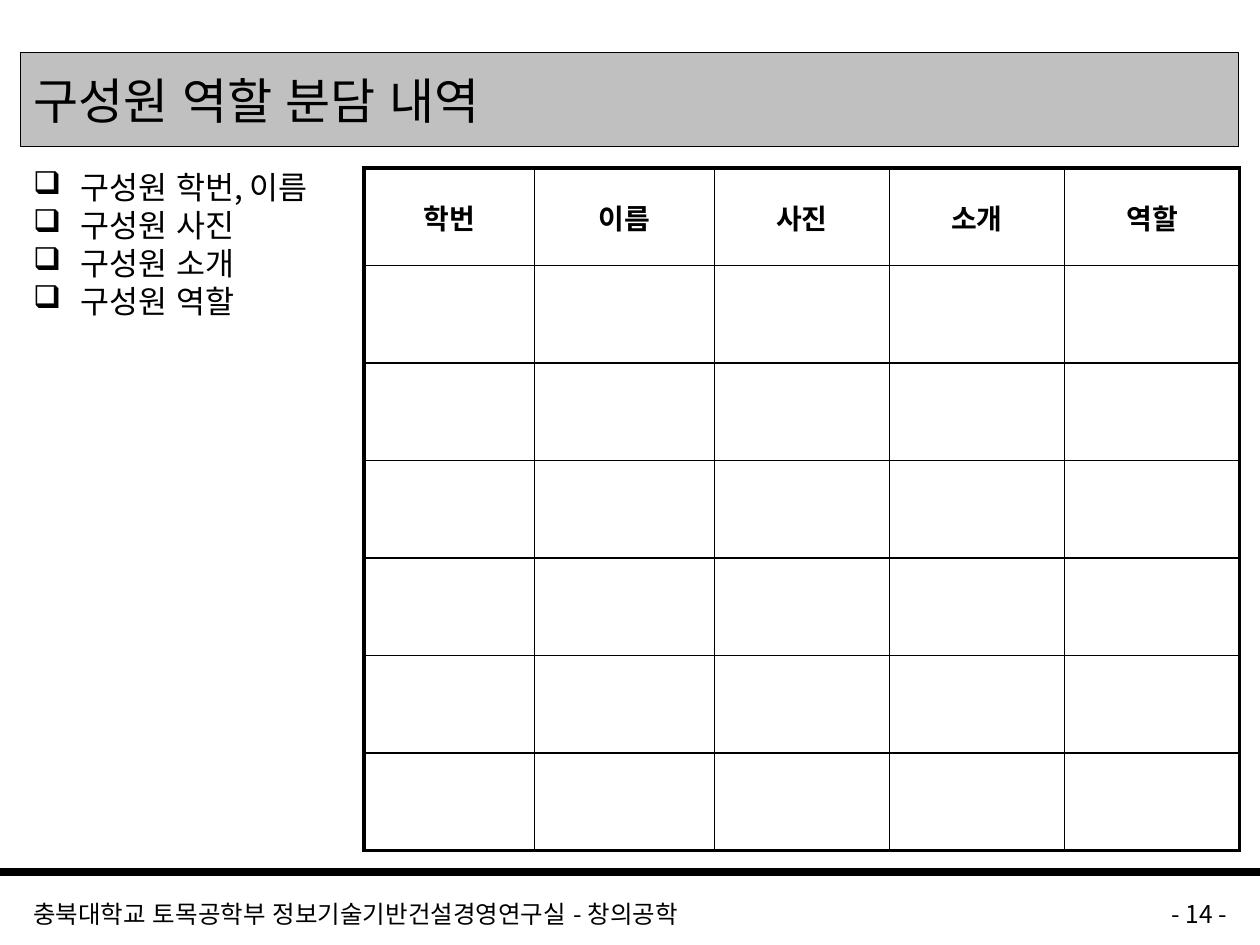
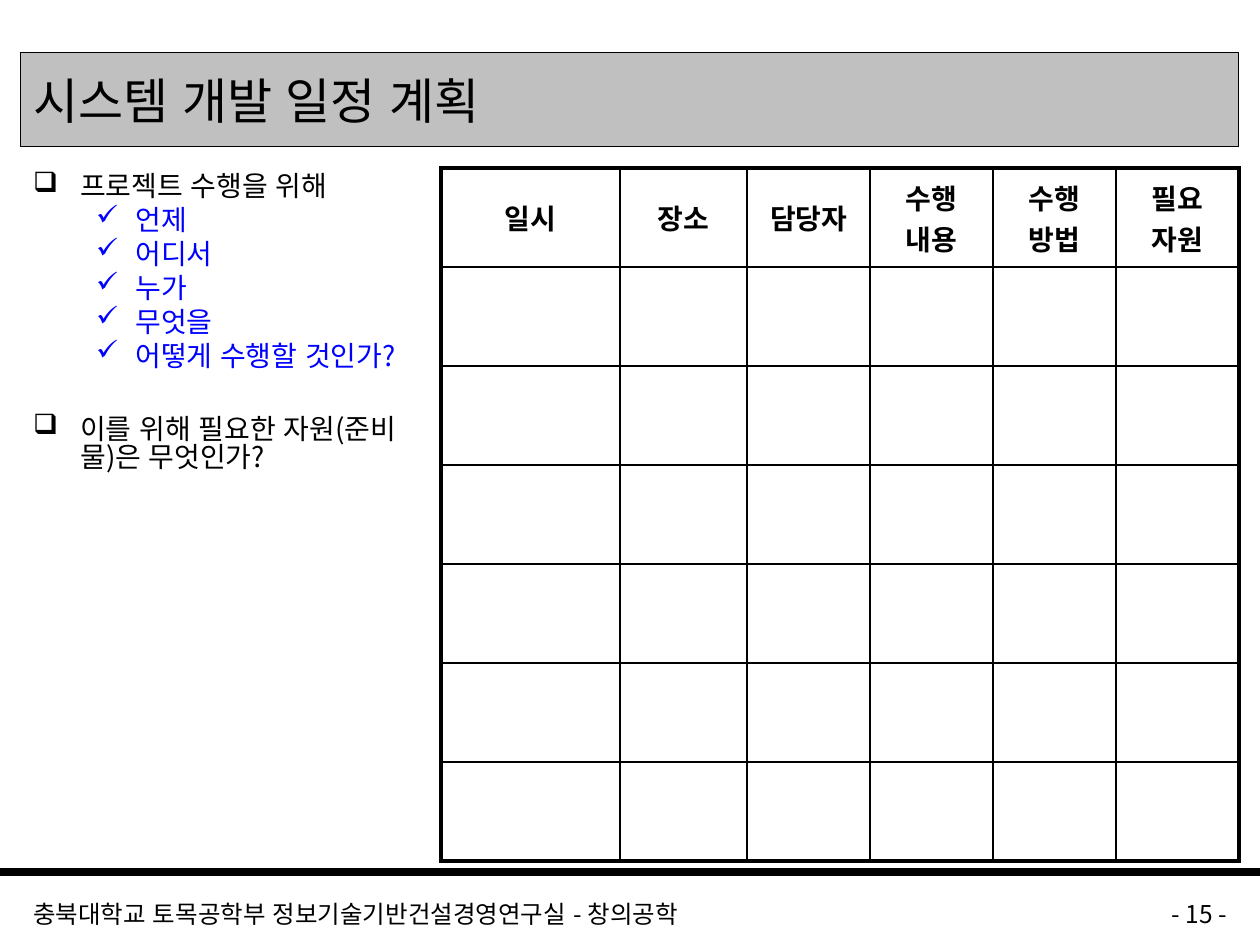
from dataclasses import dataclass

from lxml import etree
from pptx import Presentation
from pptx.dml.color import RGBColor
from pptx.enum import lang, shapes, text
from pptx.oxml import ns
from pptx.util import Cm, Pt

FONT = "Noto Sans CJK KR"
COLORS = {"ink": "000000", "band": "C0C0C0", "detail": "0000FF", "paper": "FFFFFF"}
SLIDE_W, SLIDE_H = Cm(25.4), Cm(19.05)
MARGIN, CONTENT_TOP = Cm(0.42), Cm(3.39)
BODY_H = Cm(13.76)
FOOTER = "충북대학교 토목공학부 정보기술기반건설경영연구실 - 창의공학"
TABLE_ROWS = 7
THIN, THICK = 1, 2.25


@dataclass(frozen=True)
class Level:
    bullet: str
    margin: float
    hanging: float
    color: str


TOPIC = Level("❑", 0.95, 0.95, "ink")
DETAIL = Level("✓", 2.06, 0.79, "detail")


@dataclass(frozen=True)
class Item:
    words: str
    level: Level = TOPIC
    gap_lines: int = 0


@dataclass(frozen=True)
class PlanSlide:
    number: int
    title: str
    items: list[Item]
    item_size: int
    body_width: float
    table_left: float
    table_height: float
    columns: dict[str, float]  # heading: width in cm


PLANS = [
    PlanSlide(
        14, "구성원 역할 분담 내역",
        [Item("구성원 학번, 이름"), Item("구성원 사진"),
         Item("구성원 소개"), Item("구성원 역할")],
        18, 12.07, 7.34, 13.76,
        {"학번": 3.43, "이름": 3.63, "사진": 3.53, "소개": 3.53, "역할": 3.53},
    ),
    PlanSlide(
        15, "시스템 개발 일정 계획",
        [Item("프로젝트 수행을 위해"),
         *(Item(words, DETAIL) for words in
           ("언제", "어디서", "누가", "무엇을", "어떻게 수행할 것인가?")),
         Item("이를 위해 필요한 자원(준비물)은 무엇인가?", gap_lines=1)],
        16, 8.48, 8.89, 13.97,
        {"일시": 3.61, "장소": 2.56, "담당자": 2.48,
         "수행\v내용": 2.48, "수행\v방법": 2.48, "필요\v자원": 2.48},
    ),
]


def rgb(name: str) -> RGBColor:
    return RGBColor.from_string(COLORS[name])


def style(paragraph, size: float, color: str = "ink", bold: bool = False,
          align=text.PP_ALIGN.LEFT) -> None:
    paragraph.alignment = align
    font = paragraph.font
    font.name, font.size, font.bold = FONT, Pt(size), bold
    font.color.rgb = rgb(color)
    font.language_id = lang.MSO_LANGUAGE_ID.KOREAN
    # East Asian typeface follows the Latin one
    defaults = paragraph._p.pPr.find(ns.qn("a:defRPr"))
    etree.SubElement(defaults, ns.qn("a:ea"), typeface=FONT)


def add_text_box(slide, left, top, width, height):
    frame = slide.shapes.add_textbox(left, top, width, height).text_frame
    frame.word_wrap = True
    return frame


def add_footer(slide, number: int) -> None:
    rule = slide.shapes.add_connector(
        shapes.MSO_CONNECTOR.STRAIGHT, 0, Cm(17.57), SLIDE_W, Cm(17.57))
    rule.line.color.rgb = rgb("ink")
    rule.line.width = Pt(4.5)
    etree.SubElement(rule._element.spPr, ns.qn("a:effectLst"))

    for words, left, width, align in (
        (FOOTER, MARGIN, Cm(19.9), text.PP_ALIGN.LEFT),
        (f"- {number} -", Cm(20.74), Cm(4.24), text.PP_ALIGN.RIGHT),
    ):
        frame = add_text_box(slide, left, Cm(17.99), width, Cm(0.64))
        frame.text = words
        style(frame.paragraphs[0], 14, align=align)


def set_title(slide, words: str) -> None:
    title = slide.shapes.title
    title.left, title.top, title.width, title.height = (
        MARGIN, Cm(1.06), Cm(24.55), Cm(1.9))
    title.fill.solid()
    title.fill.fore_color.rgb = rgb("band")
    title.line.color.rgb = rgb("ink")
    title.line.width = Pt(0.75)
    frame = title.text_frame
    frame.text = words
    frame.vertical_anchor = text.MSO_ANCHOR.MIDDLE
    style(frame.paragraphs[0], 28)


def add_items(slide, plan: PlanSlide) -> None:
    frame = add_text_box(slide, MARGIN, CONTENT_TOP, Cm(plan.body_width), BODY_H)
    for index, item in enumerate(plan.items):
        paragraph = frame.add_paragraph() if index else frame.paragraphs[0]
        paragraph.text = item.words
        paragraph.line_spacing = 0.84
        paragraph.space_before = Pt(plan.item_size * (0.2 + 1.41 * item.gap_lines))
        level = item.level
        properties = paragraph._p.get_or_add_pPr()
        properties.set("marL", str(Cm(level.margin)))
        properties.set("indent", str(-Cm(level.hanging)))
        etree.SubElement(properties, ns.qn("a:buChar"), char=level.bullet)
        style(paragraph, plan.item_size, level.color)


def set_borders(cell, widths: dict[str, float]) -> None:
    properties = cell._tc.get_or_add_tcPr()
    for index, (side, width) in enumerate(widths.items()):
        border = etree.Element(ns.qn(f"a:ln{side}"), w=str(Pt(width)))
        fill = etree.SubElement(border, ns.qn("a:solidFill"))
        etree.SubElement(fill, ns.qn("a:srgbClr"), val=COLORS["ink"])
        properties.insert(index, border)


def add_plan_table(slide, plan: PlanSlide) -> None:
    count = len(plan.columns)
    table = slide.shapes.add_table(
        TABLE_ROWS, count, Cm(plan.table_left), CONTENT_TOP,
        Cm(sum(plan.columns.values())), Cm(plan.table_height)).table
    table.first_row = table.horz_banding = False
    for column, width in zip(table.columns, plan.columns.values()):
        column.width = Cm(width)

    # Thick outer frame, thin inner grid
    last_row, last_column = TABLE_ROWS - 1, count - 1
    for r in range(TABLE_ROWS):
        for c in range(count):
            cell = table.cell(r, c)
            cell.fill.solid()
            cell.fill.fore_color.rgb = rgb("paper")
            outer = {"L": c == 0, "R": c == last_column,
                     "T": r == 0, "B": r == last_row}
            set_borders(cell, {side: THICK if edge else THIN
                               for side, edge in outer.items()})

    for c, heading in enumerate(plan.columns):
        cell = table.cell(0, c)
        cell.text_frame.text = heading
        cell.vertical_anchor = text.MSO_ANCHOR.MIDDLE
        style(cell.text_frame.paragraphs[0], 16, bold=True,
              align=text.PP_ALIGN.CENTER)


def main() -> None:
    deck = Presentation()
    deck.slide_width, deck.slide_height = SLIDE_W, SLIDE_H
    title_only = deck.slide_layouts[5]
    for plan in PLANS:
        slide = deck.slides.add_slide(title_only)
        add_footer(slide, plan.number)
        set_title(slide, plan.title)
        add_items(slide, plan)
        add_plan_table(slide, plan)
    deck.save("out.pptx")


if __name__ == "__main__":
    main()
